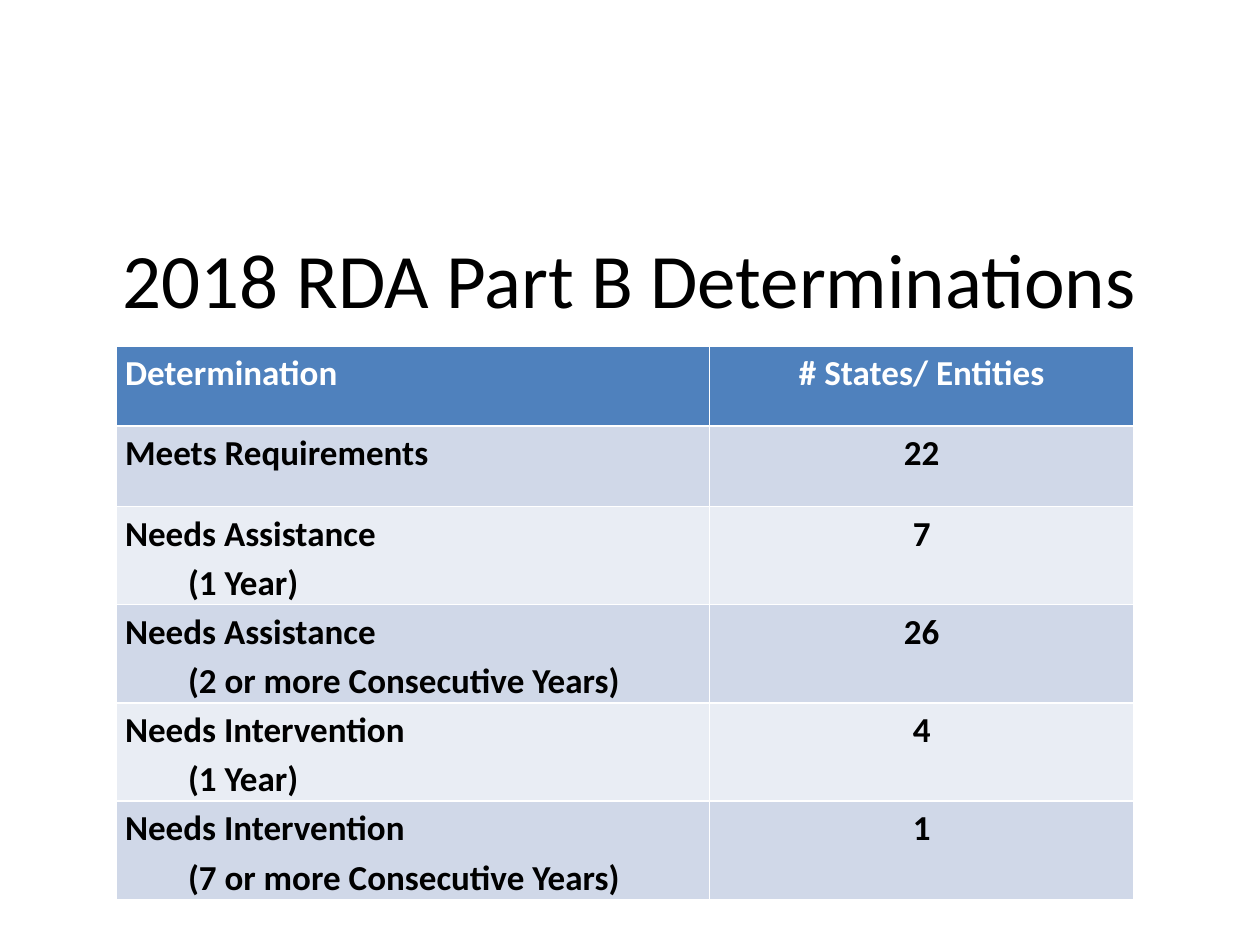
from lxml import etree
from pptx import Presentation
from pptx.dml.color import RGBColor
from pptx.enum.text import MSO_ANCHOR, PP_ALIGN
from pptx.oxml.ns import qn
from pptx.util import Cm, Pt

LEFT, CENTER = PP_ALIGN.LEFT, PP_ALIGN.CENTER
MIDDLE = MSO_ANCHOR.MIDDLE

COLORS = {
    "black": "000000",
    "white": "FFFFFF",
    "header": "4F81BD",
    "odd_row": "D0D8E8",
    "even_row": "E9EDF4",
}
TITLE_FONT = {"name": "Calibri", "size": Pt(44), "bold": False}
TABLE_FONT = {"name": "Calibri", "size": Pt(20), "bold": True}
CELL_MARGINS = {
    "margin_left": Cm(0.18),
    "margin_right": Cm(0.18),
    "margin_top": 0,
    "margin_bottom": 0,
}
COLUMN_WIDTHS = [11.96, 8.56]
ROW_HEIGHTS = {1: 1.62, 2: 1.98}
DETERMINATIONS = [
    (["Determination"], "# States/ Entities"),
    (["Meets Requirements"], "22"),
    (["Needs Assistance", "(1 Year)"], "7"),
    (["Needs Assistance", "(2 or more Consecutive Years)"], "26"),
    (["Needs Intervention", "(1 Year)"], "4"),
    (["Needs Intervention", "(7 or more Consecutive Years)"], "1"),
]


def apply_format(target, values):
    """Set each attribute of the target from a dict of values."""
    for name, value in values.items():
        setattr(target, name, value)


class SlideBuilder:
    """Hold the shared style and the slide being built."""

    def __init__(self, slide, colors):
        self.slide = slide
        self.colors = colors

    def color(self, name):
        """Return the named colour."""
        return RGBColor.from_string(self.colors[name])

    def fill_paragraph(self, paragraph, text, font, color, alignment):
        """Put formatted text into a paragraph."""
        paragraph.text = text
        paragraph.alignment = alignment
        apply_format(paragraph.font, font)
        paragraph.font.color.rgb = self.color(color)

    def title(self, text, left, top, width, height):
        """Add the centred slide title."""
        shape = self.slide.shapes.add_textbox(Cm(left), Cm(top), Cm(width), Cm(height))
        frame = shape.text_frame
        apply_format(frame, {"word_wrap": True, "vertical_anchor": MIDDLE})
        self.fill_paragraph(frame.paragraphs[0], text, TITLE_FONT, "black", CENTER)

    def borders(self, cell):
        """Draw a thin white line on every side of a cell."""
        properties = cell._tc.get_or_add_tcPr()
        for side in ("lnL", "lnR", "lnT", "lnB"):
            line = etree.SubElement(properties, qn(f"a:{side}"), w=str(Pt(1)))
            fill = etree.SubElement(line, qn("a:solidFill"))
            etree.SubElement(fill, qn("a:srgbClr"), val=self.colors["white"])

    def cell(self, cell, lines, fill, color, alignment):
        """Fill a cell, indenting every line after the first."""
        self.borders(cell)
        apply_format(cell, CELL_MARGINS)
        cell.fill.solid()
        cell.fill.fore_color.rgb = self.color(fill)
        frame = cell.text_frame
        for index, text in enumerate(lines):
            paragraph = frame.add_paragraph() if index else frame.paragraphs[0]
            if index:
                paragraph.level = 1
                paragraph._p.get_or_add_pPr().set("marL", str(Cm(1.27)))
            paragraph.line_spacing = 1.15
            self.fill_paragraph(paragraph, text, TABLE_FONT, color, alignment)

    def table(self, rows, left, top):
        """Add the table with a header and alternating row fills."""
        heights = [ROW_HEIGHTS[len(lines)] for lines, _ in rows]
        table = self.slide.shapes.add_table(
            len(rows), len(COLUMN_WIDTHS), Cm(left), Cm(top),
            Cm(sum(COLUMN_WIDTHS)), Cm(sum(heights)),
        ).table
        for column, width in zip(table.columns, COLUMN_WIDTHS):
            column.width = Cm(width)
        for index, (lines, count) in enumerate(rows):
            table.rows[index].height = Cm(heights[index])
            fill = "odd_row" if index % 2 else "even_row"
            color = "black"
            if index == 0:
                fill, color = "header", "white"
            self.cell(table.cell(index, 0), lines, fill, color, LEFT)
            self.cell(table.cell(index, 1), [count], fill, color, CENTER)


def main():
    """Build and save the presentation."""
    presentation = Presentation()
    presentation.slide_width, presentation.slide_height = Cm(25.4), Cm(19.05)
    slide = presentation.slides.add_slide(presentation.slide_layouts[6])
    builder = SlideBuilder(slide, COLORS)
    builder.title("2018 RDA Part B Determinations", 1.27, 4.65, 22.86, 1.9)
    builder.table(DETERMINATIONS, 2.34, 6.97)
    presentation.save("out.pptx")


if __name__ == "__main__":
    main()
